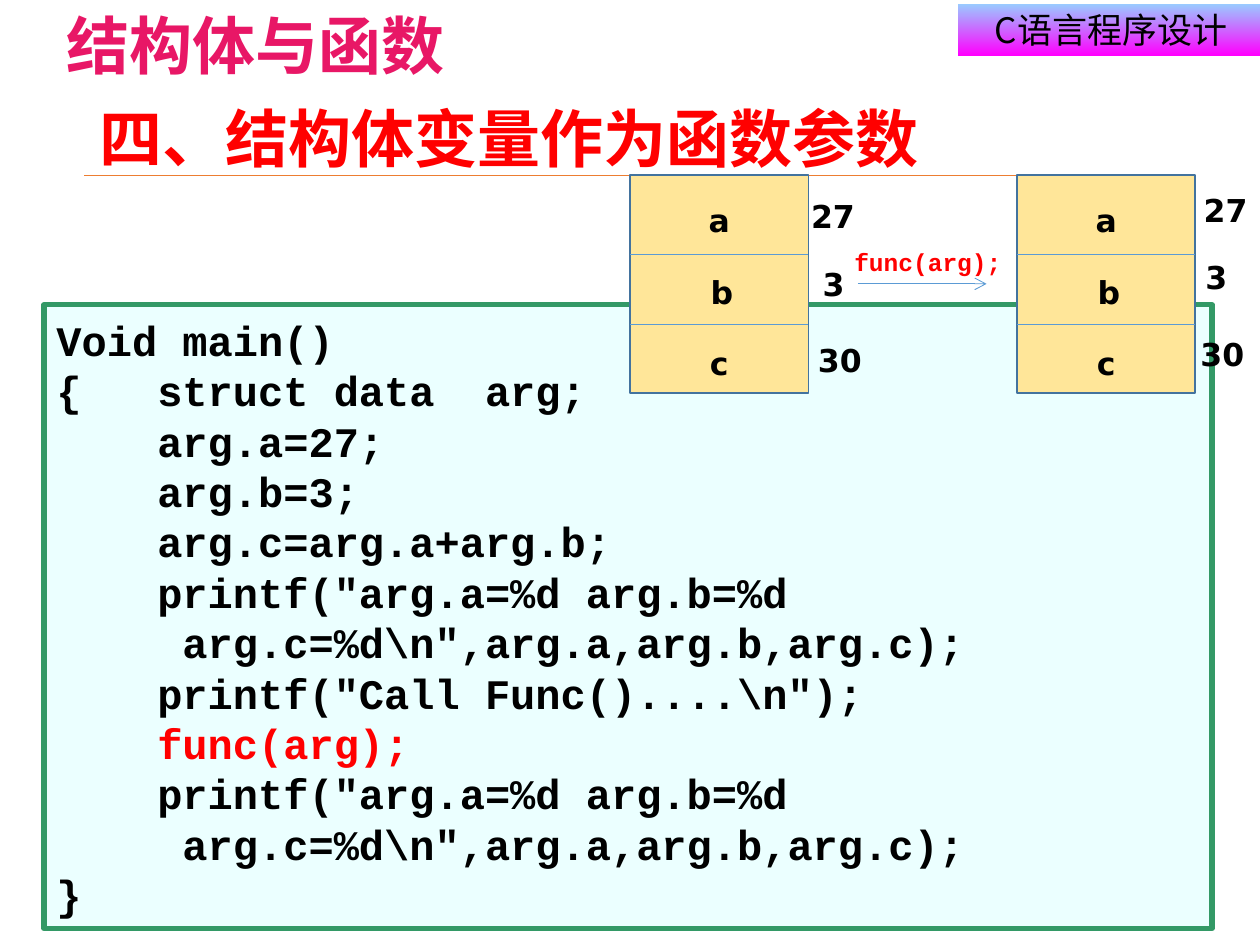
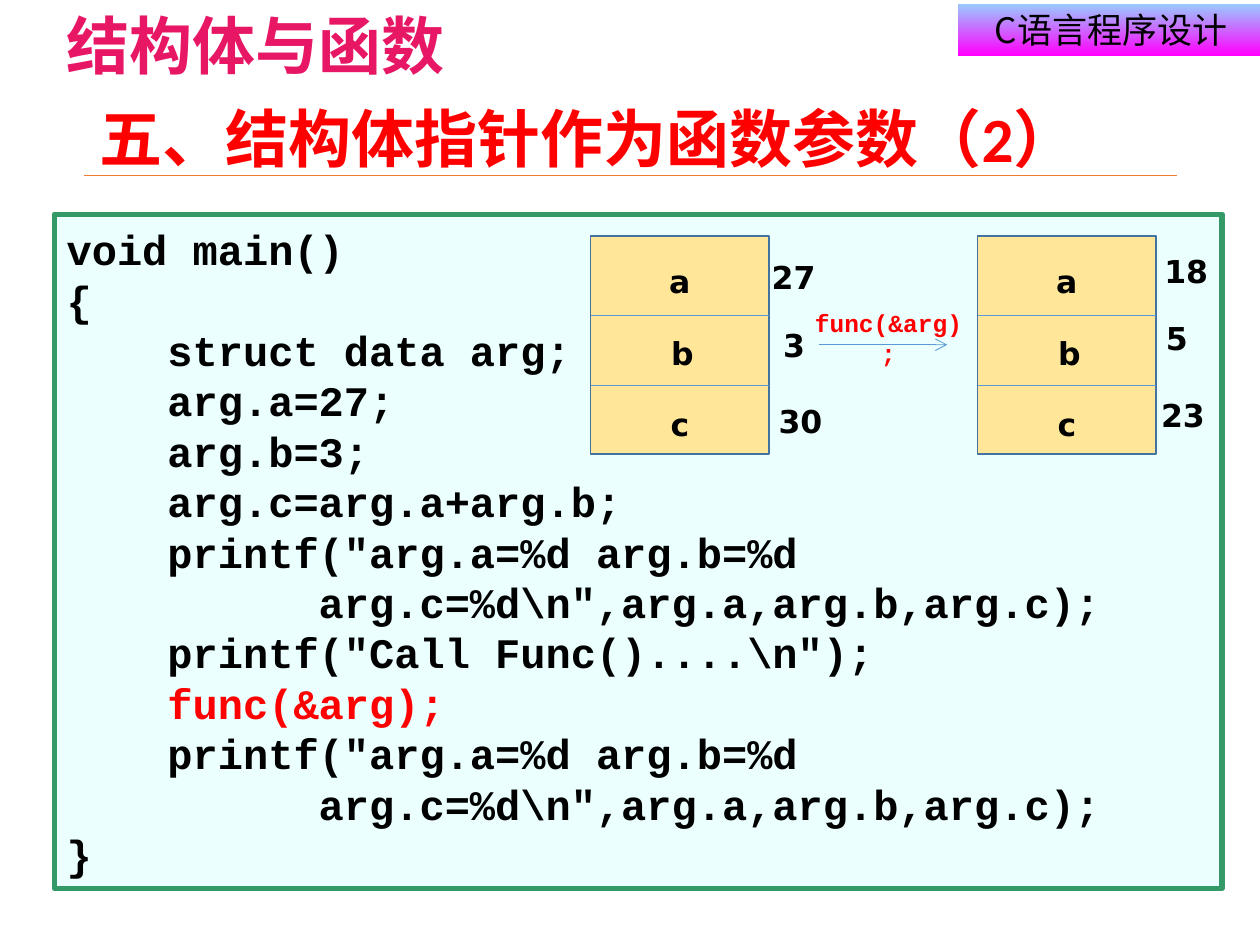
import pptx
import pptx.util
import pptx.dml.color
import pptx.enum.shapes
import pptx.enum.text
import pptx.oxml.ns
import lxml.etree

Pt = pptx.util.Pt
ALIGN = pptx.enum.text.PP_ALIGN
ANCHOR = pptx.enum.text.MSO_ANCHOR
RECT = pptx.enum.shapes.MSO_SHAPE.RECTANGLE
HUES = {
    "ink": "000000", "red": "FF0000", "pink": "E81766", "sky": "99CCFF",
    "fuchsia": "FF00FF", "rule": "ED7D31", "mint": "EBFFFF", "green": "339966",
    "sand": "FFE699", "navy": "43739E", "blue": "5B9BD5",
}
HAN = "Noto Sans CJK SC"
MONO = "Courier New"
FIELDS = "abc"

SETUP = """    arg.a=27;
    arg.b=3;
    arg.c=arg.a+arg.b;"""
PRINT = r"""    printf("arg.a=%d arg.b=%d
{pad}arg.c=%d\n",arg.a,arg.b,arg.c);"""
NOTICE = r"""    printf("Call Func()....\n");"""

PAGES = [
    {
        "title": "四、结构体变量作为函数参数",
        "head": "Void main()\n{   struct data  arg;",
        "call": "func(arg);", "pad": 5,
        "frame": (25.2, 174.2, 667.4, 356.4), "origin": (360, 100),
        "after": ("27", "3", "30"),
    },
    {
        "title": "五、结构体指针作为函数参数（2）",
        "head": "void main()\n{\n    struct data arg;",
        "call": "func(&arg);", "pad": 10,
        "frame": (31, 122.4, 667.4, 385.2), "origin": (337.5, 134.8),
        "after": ("18", "5", "23"),
    },
]


def tint(key):
    """Return a named colour."""
    return pptx.dml.color.RGBColor.from_string(HUES[key])


def write(frame, text, size=18, face="DejaVu Sans", han=HAN, hue="ink", bold=True,
          align=ALIGN.CENTER, anchor=ANCHOR.TOP, wrap=True, pitch=None, marked=None):
    """Fill a text frame line by line, with the marked line in red."""
    frame.word_wrap = wrap
    frame.auto_size = pptx.enum.text.MSO_AUTO_SIZE.NONE
    frame.vertical_anchor = anchor
    frame.text = text
    for para in frame.paragraphs:
        para.alignment = align
        para.line_spacing = pitch
        for run in para.runs:
            font = run.font
            font.size, font.bold, font.name = Pt(size), bold, face
            font.color.rgb = tint("red" if run.text.strip() == marked else hue)
            latin = font._element.find(pptx.oxml.ns.qn("a:latin"))
            asian = lxml.etree.Element(pptx.oxml.ns.qn("a:ea"), typeface=han)
            latin.addnext(asian)


def label(slide, text, box, **style):
    """Add a text box."""
    shape = slide.shapes.add_textbox(*map(Pt, box))
    write(shape.text_frame, text, **style)


def block(slide, box, fill=None, edge=None, width=1):
    """Add a flat rectangle."""
    shape = slide.shapes.add_shape(RECT, *map(Pt, box))
    shape.shadow.inherit = False
    if fill:
        shape.fill.solid()
        shape.fill.fore_color.rgb = tint(fill)
    if edge:
        shape.line.color.rgb = tint(edge)
        shape.line.width = Pt(width)
    else:
        shape.line.fill.background()
    return shape


def rule(slide, left, top, width, hue="blue", weight=0.5, arrow=False):
    """Draw a level line, with an arrowhead if asked."""
    line = slide.shapes.add_connector(
        pptx.enum.shapes.MSO_CONNECTOR.STRAIGHT,
        Pt(left), Pt(top), Pt(left + width), Pt(top))
    line.line.color.rgb = tint(hue)
    line.line.width = Pt(weight)
    if arrow:
        lxml.etree.SubElement(line.line._get_or_add_ln(),
                              pptx.oxml.ns.qn("a:tailEnd"), type="arrow")
    lxml.etree.SubElement(line._element.spPr, pptx.oxml.ns.qn("a:effectLst"))


def header(slide, title):
    """Place the course band, chapter name, rule and title."""
    band = block(slide, (547.2, 2.2, 175.5, 29.5))
    band.fill.gradient()
    band.fill.gradient_angle = 270
    for stop, hue in zip(band.fill.gradient_stops, ("sky", "fuchsia")):
        stop.color.rgb = tint(hue)
    write(band.text_frame, "C语言程序设计", size=20, face=HAN, bold=False,
          anchor=ANCHOR.MIDDLE)
    chapter = "Noto Sans CJK JP"
    label(slide, "结构体与函数", (14.4, 0, 263.5, 29.5), size=36, face=chapter,
          han=chapter, hue="pink", wrap=False)
    rule(slide, 48.2, 100, 624.2, hue="rule", weight=0.25)
    head = slide.shapes.title
    head.left, head.top, head.width, head.height = map(Pt, (49.7, 28.8, 620.6, 104.4))
    write(head.text_frame, title, size=36, face="Calibri", hue="red",
          align=ALIGN.LEFT, anchor=ANCHOR.MIDDLE, pitch=0.9)


def listing(slide, box, head, call, pad):
    """Place the framed program, with its call in red."""
    show = PRINT.replace("{pad}", " " * pad)
    code = "\n".join([head, SETUP, show, NOTICE, "    " + call, show, "}"])
    frame = block(slide, box, "mint", "green", 3)
    write(frame.text_frame, code, size=24, face=MONO, align=ALIGN.LEFT,
          anchor=ANCHOR.MIDDLE, marked=call)


def record(slide, left, top, values, spots):
    """Draw one struct with its three fields and their values beside it."""
    block(slide, (left, top, 102, 124.6), "sand", "navy")
    for drop in (45.4, 85.3):
        rule(slide, left, top + drop, 102)
    places = ((22.5, 11.5), (24, 52.5), (22.5, 93.2))
    for texts, offsets in ((FIELDS, places), (values, spots)):
        for text, (right, down) in zip(texts, offsets):
            label(slide, text, (left + right, top + down, 57, 28.8))


def passing(slide, left, top, call, after):
    """Draw the argument, the call arrow and the parameter."""
    record(slide, left, top, ("27", "3", "30"), ((87.5, 9), (87.8, 47.8), (91.4, 91.2)))
    record(slide, left + 221.1, top, after, ((90.7, 5.4), (85.4, 44.2), (88.9, 87.8)))
    rule(slide, left + 130.3, top + 62.2, 73.5, arrow=True)
    label(slide, call, (left + 119.5, top + 37.8, 101.5, 24.5), size=14,
          face=MONO, hue="red")


def main():
    """Build and save the slides."""
    deck = pptx.Presentation()
    deck.slide_width, deck.slide_height = Pt(720), Pt(540)
    for page in PAGES:
        slide = deck.slides.add_slide(deck.slide_layouts[5])
        header(slide, page["title"])
        listing(slide, page["frame"], page["head"], page["call"], page["pad"])
        passing(slide, *page["origin"], page["call"], page["after"])
    deck.save("out.pptx")


if __name__ == "__main__":
    main()
